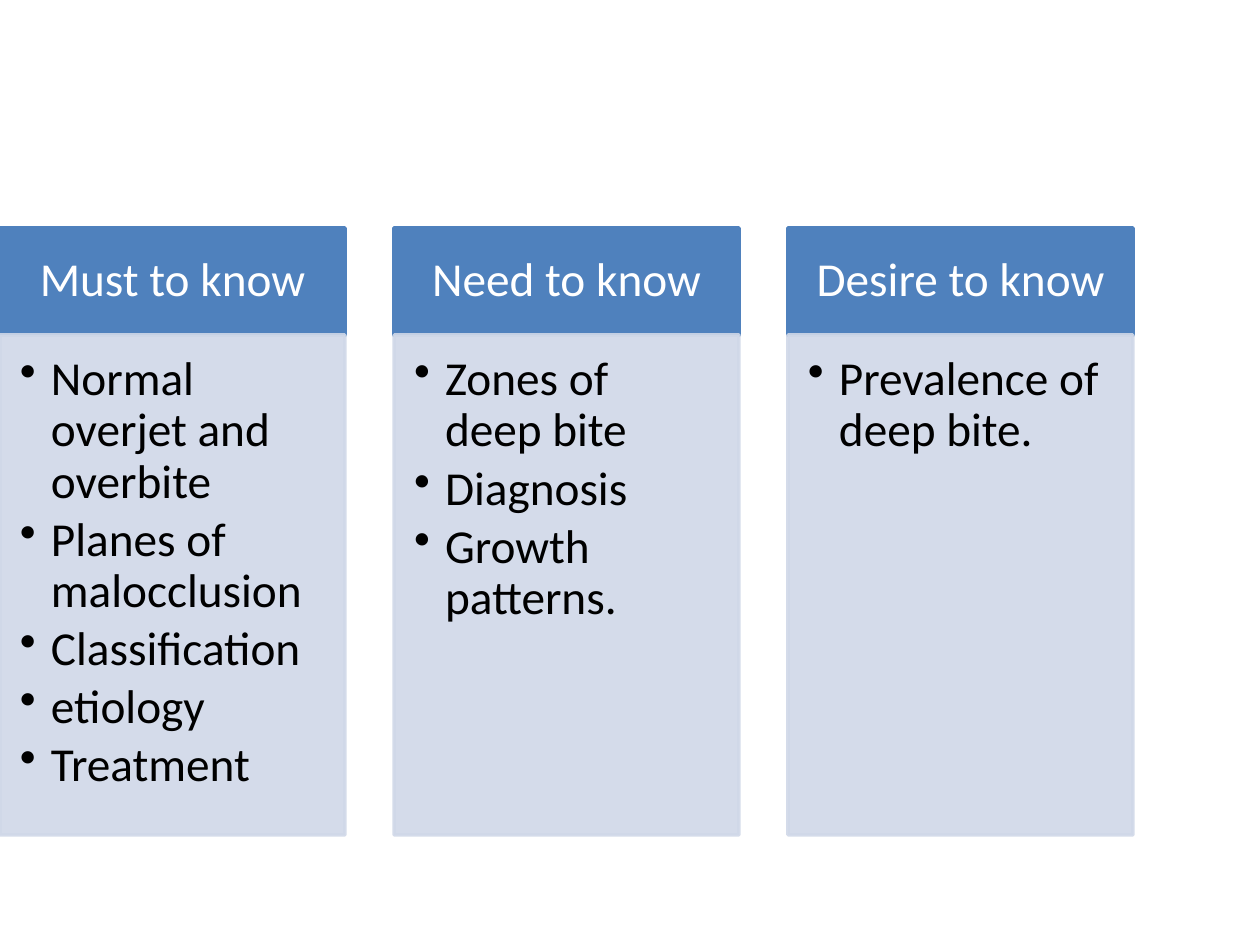
from lxml import etree
from pptx import Presentation
from pptx import util as u
from pptx.dml.color import RGBColor
from pptx.enum import shapes, text
from pptx.oxml import ns

COLUMNS = [
    ("Must to know", ["Normal overjet and overbite", "Planes of malocclusion",
                      "Classification", "etiology", "Treatment"]),
    ("Need to know", ["Zones of deep bite", "Diagnosis", "Growth patterns."]),
    ("Desire to know", ["Prevalence of deep bite."]),
]

BLUE = RGBColor(0x4F, 0x81, 0xBD)
PALE_BLUE = RGBColor(0xD0, 0xD8, 0xE8)
WHITE = RGBColor(0xFF, 0xFF, 0xFF)
BLACK = RGBColor(0x00, 0x00, 0x00)

SLIDE_WIDTH, SLIDE_HEIGHT = 1260, 945
COLUMN_WIDTH, COLUMN_PITCH = 345, 394
HEADER_TOP, HEADER_HEIGHT, BODY_HEIGHT = 228, 107, 500
HEADER_INSETS = (26, 15, 26, 15)
BODY_INSETS = (20, 20, 26, 30)
BULLET_INDENT = 31


def px(length):
    return u.Emu(round(length * 914400 / 126))


def add_panel(slide, left, top, height, color, insets, anchor):
    shape = slide.shapes.add_shape(shapes.MSO_SHAPE.RECTANGLE,
                                   px(left), px(top), px(COLUMN_WIDTH), px(height))
    shape.shadow.inherit = False
    shape.fill.solid()
    shape.fill.fore_color.rgb = color
    shape.line.color.rgb = color
    shape.line.width = u.Pt(2)
    frame = shape.text_frame
    frame.word_wrap = True
    frame.vertical_anchor = anchor
    (frame.margin_left, frame.margin_top,
     frame.margin_right, frame.margin_bottom) = map(px, insets)
    return shape


def set_opacity(shape, percent):
    """Apply one opacity to both fill and outline."""
    for color in shape._element.spPr.iter(ns.qn("a:srgbClr")):
        etree.SubElement(color, ns.qn("a:alpha"), val=str(percent * 1000))


def format_paragraph(paragraph, color, alignment, space_after):
    paragraph.alignment = alignment
    paragraph.line_spacing = 0.9
    paragraph.space_after = u.Pt(space_after)
    for run in paragraph.runs:
        run.font.name = "Calibri"
        run.font.size = u.Pt(27)
        run.font.color.rgb = color


def add_bullet(paragraph):
    paragraph.level = 1
    properties = paragraph._p.get_or_add_pPr()
    properties.set("marL", str(px(BULLET_INDENT)))
    properties.set("indent", str(-px(BULLET_INDENT)))
    etree.SubElement(properties, ns.qn("a:buChar"), char="•")


def add_column(slide, left, title, items):
    header = add_panel(slide, left, HEADER_TOP, HEADER_HEIGHT, BLUE,
                       HEADER_INSETS, text.MSO_ANCHOR.MIDDLE)
    header.text_frame.text = title
    format_paragraph(header.text_frame.paragraphs[0], WHITE, text.PP_ALIGN.CENTER, 9.45)

    body = add_panel(slide, left, HEADER_TOP + HEADER_HEIGHT, BODY_HEIGHT, PALE_BLUE,
                     BODY_INSETS, text.MSO_ANCHOR.TOP)
    set_opacity(body, 90)
    body.text_frame.text = "\n".join(items)
    for paragraph in body.text_frame.paragraphs:
        format_paragraph(paragraph, BLACK, text.PP_ALIGN.LEFT, 4.05)
        add_bullet(paragraph)


def main():
    presentation = Presentation()
    presentation.slide_width = px(SLIDE_WIDTH)
    presentation.slide_height = px(SLIDE_HEIGHT)
    slide = presentation.slides.add_slide(presentation.slide_layouts[6])
    for index, (title, items) in enumerate(COLUMNS):
        add_column(slide, index * COLUMN_PITCH, title, items)
    presentation.save("out.pptx")


if __name__ == "__main__":
    main()
